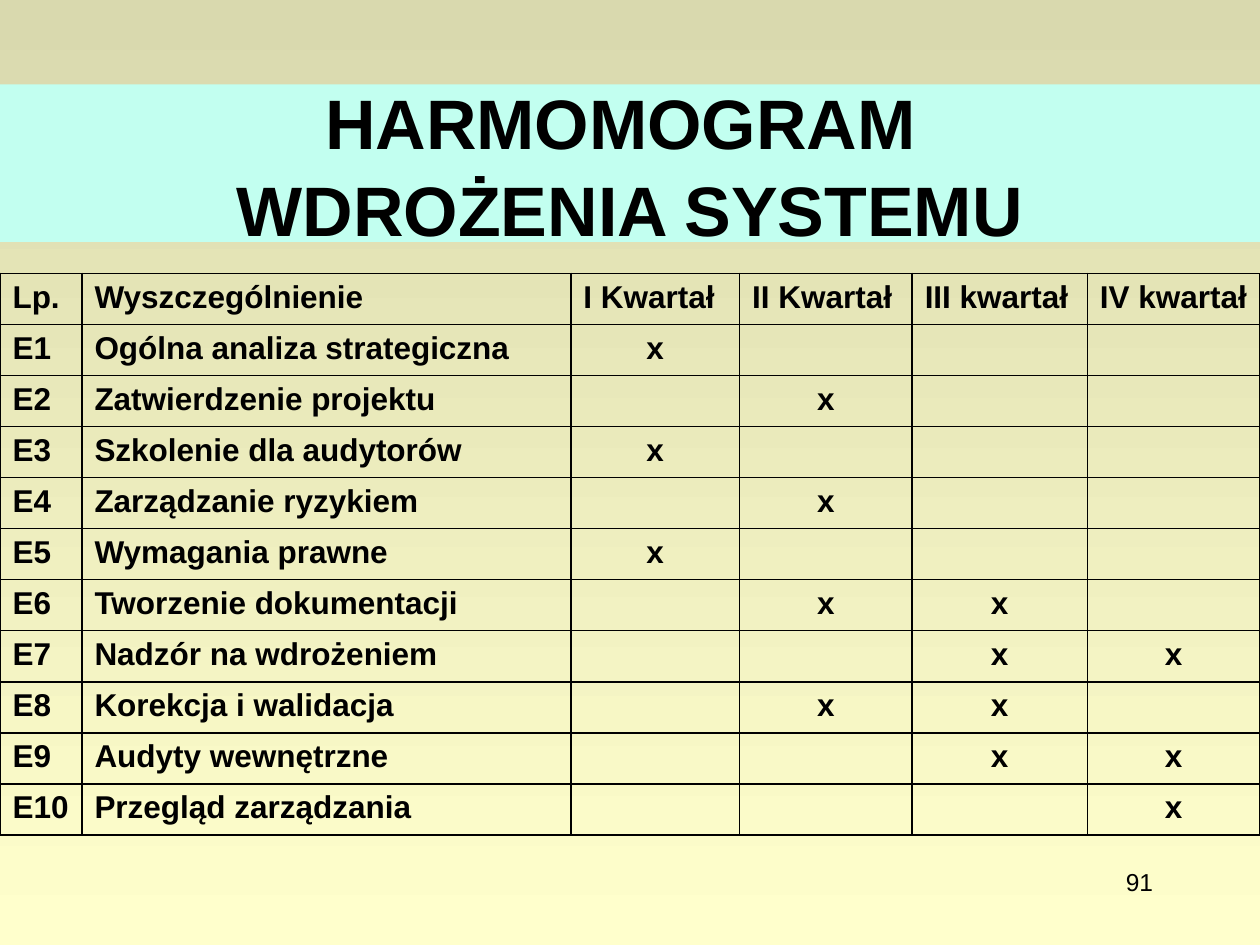
from lxml.etree import SubElement
from pptx import Presentation
from pptx.dml.color import RGBColor
from pptx.enum.text import MSO_ANCHOR, MSO_AUTO_SIZE, PP_ALIGN
from pptx.oxml import parse_xml
from pptx.oxml.ns import nsdecls, qn
from pptx.util import Inches, Pt

COLORS = {"top": "D9D9AE", "bottom": "FFFFCC", "band": "C2FFF0", "ink": "000000"}
FONT = "Arial"
HEADING = "HARMOMOGRAM \vWDROŻENIA SYSTEMU"
PAGE_NUMBER = "91"
HEADERS = ["Lp.", "Wyszczególnienie", "I Kwartał", "II Kwartał", "III kwartał", "IV kwartał"]
STAGES = [
    ("Ogólna analiza strategiczna", {1}),
    ("Zatwierdzenie projektu", {2}),
    ("Szkolenie dla audytorów", {1}),
    ("Zarządzanie ryzykiem", {2}),
    ("Wymagania prawne", {1}),
    ("Tworzenie dokumentacji", {2, 3}),
    ("Nadzór na wdrożeniem", {3, 4}),
    ("Korekcja i walidacja", {2, 3}),
    ("Audyty wewnętrzne", {3, 4}),
    ("Przegląd zarządzania", {4}),
]
COLUMN_WIDTHS = [0.65, 3.88, 1.34, 1.37, 1.39, 1.37]
TABLE_TOP, TABLE_HEIGHT = 2.17, 4.46


def rgb(name):
    return RGBColor.from_string(COLORS[name])


def style(paragraph, size, bold, align):
    paragraph.alignment = align
    font = paragraph.font
    font.name, font.size, font.bold = FONT, Pt(size), bold
    font.color.rgb = rgb("ink")


def add_borders(cell):
    properties = cell._tc.get_or_add_tcPr()
    for index, side in enumerate(("lnL", "lnR", "lnT", "lnB")):
        border = parse_xml(f'<a:{side} {nsdecls("a")} w="{Pt(1)}"/>')
        fill = SubElement(border, qn("a:solidFill"))
        SubElement(fill, qn("a:srgbClr"), val=COLORS["ink"])
        properties.insert(index, border)


def paint_background(slide):
    fill = slide.background.fill
    fill.gradient()
    fill.gradient_angle = 270
    for stop, name, position in zip(fill.gradient_stops, ("top", "bottom"), (0, 1)):
        stop.color.rgb = rgb(name)
        stop.position = position


def add_heading(slide):
    heading = slide.shapes.title
    heading.left, heading.top = Inches(0), Inches(0.67)
    heading.width, heading.height = Inches(10), Inches(1.25)
    heading.fill.solid()
    heading.fill.fore_color.rgb = rgb("band")
    frame = heading.text_frame
    frame.text = HEADING
    frame.auto_size = MSO_AUTO_SIZE.NONE
    frame.vertical_anchor = MSO_ANCHOR.MIDDLE
    style(frame.paragraphs[0], 40, True, PP_ALIGN.CENTER)
    frame.paragraphs[0].line_spacing = 1.04


def add_schedule(slide):
    rows = [HEADERS] + [
        [f"E{number}", stage] + ["x" if quarter in quarters else "" for quarter in range(1, 5)]
        for number, (stage, quarters) in enumerate(STAGES, 1)
    ]
    schedule = slide.shapes.add_table(
        len(rows), len(HEADERS), Inches(0), Inches(TABLE_TOP), Inches(10), Inches(TABLE_HEIGHT)
    ).table
    schedule.first_row = schedule.horz_banding = False
    for column, width in zip(schedule.columns, COLUMN_WIDTHS):
        column.width = Inches(width)
    for row_index, row in enumerate(rows):
        for column_index, wording in enumerate(row):
            cell = schedule.cell(row_index, column_index)
            cell.text = wording
            cell.fill.background()
            is_mark = row_index > 0 and column_index > 1
            align = PP_ALIGN.CENTER if is_mark else PP_ALIGN.LEFT
            style(cell.text_frame.paragraphs[0], 18, True, align)
            add_borders(cell)


def add_page_number(slide):
    box = slide.shapes.add_textbox(Inches(7.17), Inches(6.83), Inches(2.08), Inches(0.5))
    frame = box.text_frame
    frame.word_wrap = True
    frame.text = PAGE_NUMBER
    style(frame.paragraphs[0], 14, False, PP_ALIGN.RIGHT)


def main():
    """Build the implementation schedule slide."""
    deck = Presentation()
    deck.slide_width, deck.slide_height = Inches(10), Inches(7.5)
    slide = deck.slides.add_slide(deck.slide_layouts[5])
    paint_background(slide)
    add_heading(slide)
    add_schedule(slide)
    add_page_number(slide)
    deck.save("out.pptx")


if __name__ == "__main__":
    main()
